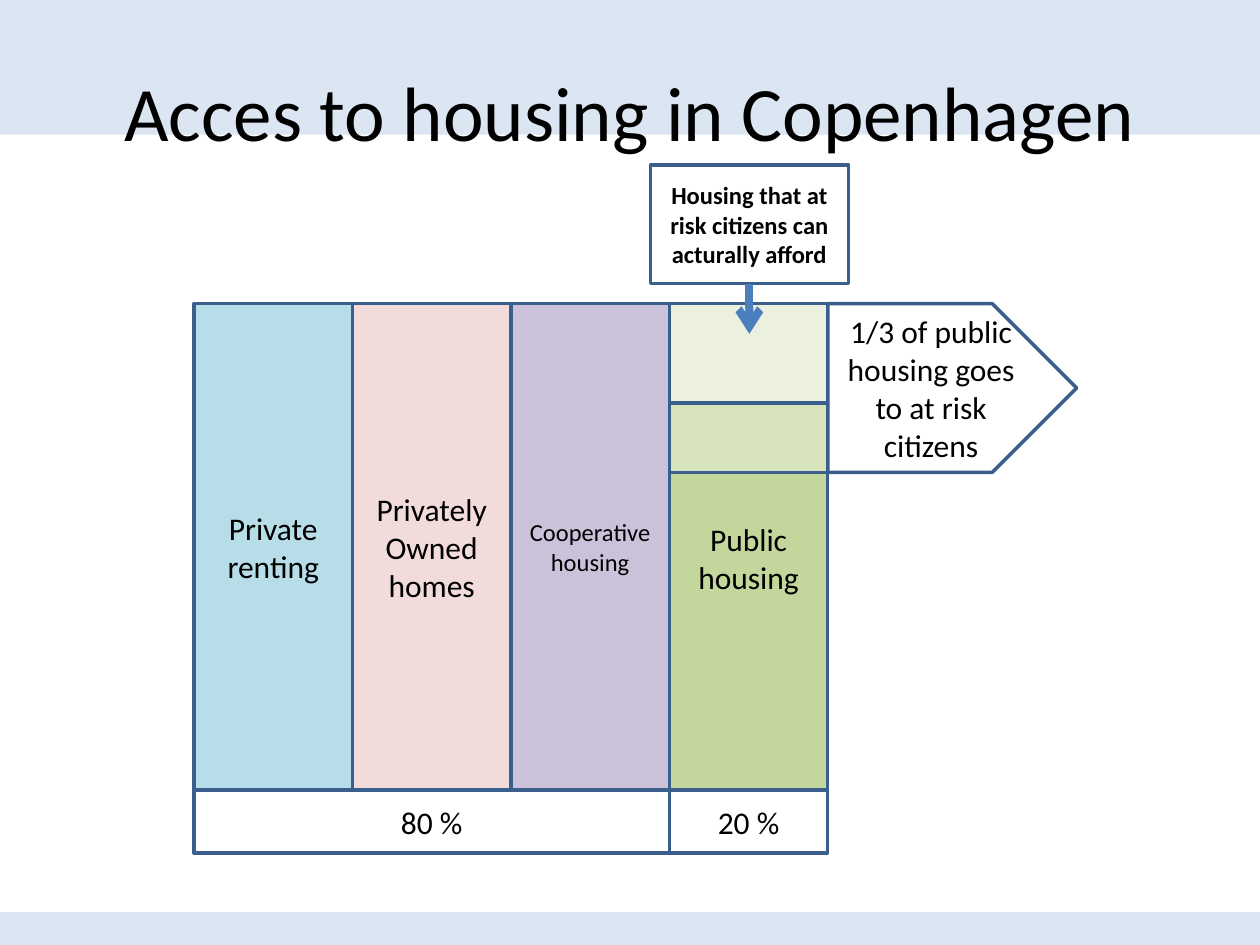
from lxml import etree
from pptx import Presentation
from pptx.dml.color import RGBColor
from pptx.enum.shapes import MSO_CONNECTOR as CONN, MSO_SHAPE as SHAPE
from pptx.enum.text import MSO_ANCHOR as ANCHOR, PP_ALIGN as ALIGN
from pptx.oxml.ns import qn
from pptx.util import Inches, Pt

LEFT, RIGHT = 1.54, 6.57
COL = (RIGHT - LEFT) / 4
# Edges: callout top and bottom, bars top, three splits, bars bottom, shares bottom
ROWS = [1.31, 2.25, 2.41, 2.96, 3.2, 3.75, 6.27, 6.77]


def rgb(color):
    return RGBColor.from_string(color)


class Diagram:
    font, ink, outline, band_fill = "Calibri", "000000", "3A5F8C", "DCE6F2"

    def __init__(self, prs):
        self.width, self.height = prs.slide_width, prs.slide_height
        self.shapes = prs.slides.add_slide(prs.slide_layouts[6]).shapes

    def set_text(self, sp, text, size, bold=False):
        tf = sp.text_frame
        tf.word_wrap = True
        tf.vertical_anchor = ANCHOR.MIDDLE
        p = tf.paragraphs[0]
        p.text = text
        p.alignment = ALIGN.CENTER
        p.font.name, p.font.size, p.font.bold = self.font, Pt(size), bold
        p.font.color.rgb = rgb(self.ink)

    def band(self, top, share):
        """Full-width strip; top and share are fractions of the slide height."""
        sp = self.shapes.add_shape(SHAPE.RECTANGLE, 0, round(top * self.height),
                                   self.width, round(share * self.height))
        sp.shadow.inherit = False
        sp.fill.solid()
        sp.fill.fore_color.rgb = rgb(self.band_fill)
        sp.line.fill.background()

    def title(self, text):
        sp = self.shapes.add_textbox(Inches(0.5), Inches(0.29), Inches(9), Inches(1.18))
        self.set_text(sp, text, 44)

    def block(self, col, cols, top, bottom, fill, text="", size=18, bold=False,
              kind=SHAPE.RECTANGLE):
        """Outlined shape from grid column col, between row edges top and bottom."""
        sp = self.shapes.add_shape(
            kind, Inches(LEFT + col * COL), Inches(ROWS[top]),
            Inches(cols * COL), Inches(ROWS[bottom] - ROWS[top]))
        sp.shadow.inherit = False
        sp.fill.solid()
        sp.fill.fore_color.rgb = rgb(fill)
        sp.line.color.rgb = rgb(self.outline)
        sp.line.width = Pt(2)
        if text:
            self.set_text(sp, text, size, bold)
        return sp

    def arrow_down(self, source, length):
        """Arrow from the middle of the source's bottom side."""
        x, y = source.left + source.width // 2, source.top + source.height
        c = self.shapes.add_connector(CONN.STRAIGHT, x, y, x, y + Inches(length))
        c.begin_connect(source, 2)
        c.line.color.rgb = rgb("4B7EBC")
        c.line.width = Pt(4.5)
        props = c._element.spPr
        etree.SubElement(props.find(qn("a:ln")), qn("a:tailEnd"), type="arrow")
        etree.SubElement(props, qn("a:effectLst"))


def main():
    prs = Presentation()
    prs.slide_width, prs.slide_height = Inches(10), Inches(7.5)
    d = Diagram(prs)
    d.band(0, 1.07 / 7.5)
    d.band(7.24 / 7.5, 0.26 / 7.5)
    d.title("Acces to housing in Copenhagen")

    tenures = [("Private renting", "B7DEE8", 18),
               ("Privately Owned homes", "F2DCDB", 18),
               ("Cooperative housing", "CCC1DA", 14)]
    for col, (name, fill, size) in enumerate(tenures):
        d.block(col, 1, 2, 6, fill, name, size)
    public = d.block(3, 1, 5, 6, "C3D69B", "Public housing")
    public.text_frame.margin_bottom = Inches(1.21)

    d.block(3, 1, 6, 7, "FFFFFF", "20 %")
    d.block(0, 3, 6, 7, "FFFFFF", "80 %")
    d.block(3, 1, 3, 5, "D7E4BD")
    d.block(3, 1, 2, 4, "EBF1DE")
    d.block(4, 1.57, 2, 5, "FFFFFF", "1/3 of public housing goes to at risk citizens",
            kind=SHAPE.PENTAGON)
    callout = d.block(2.88, 1.25, 0, 1, "FFFFFF",
                      "Housing that at risk citizens can acturally afford", 14, True)
    d.arrow_down(callout, 0.4)
    prs.save("out.pptx")


if __name__ == "__main__":
    main()
